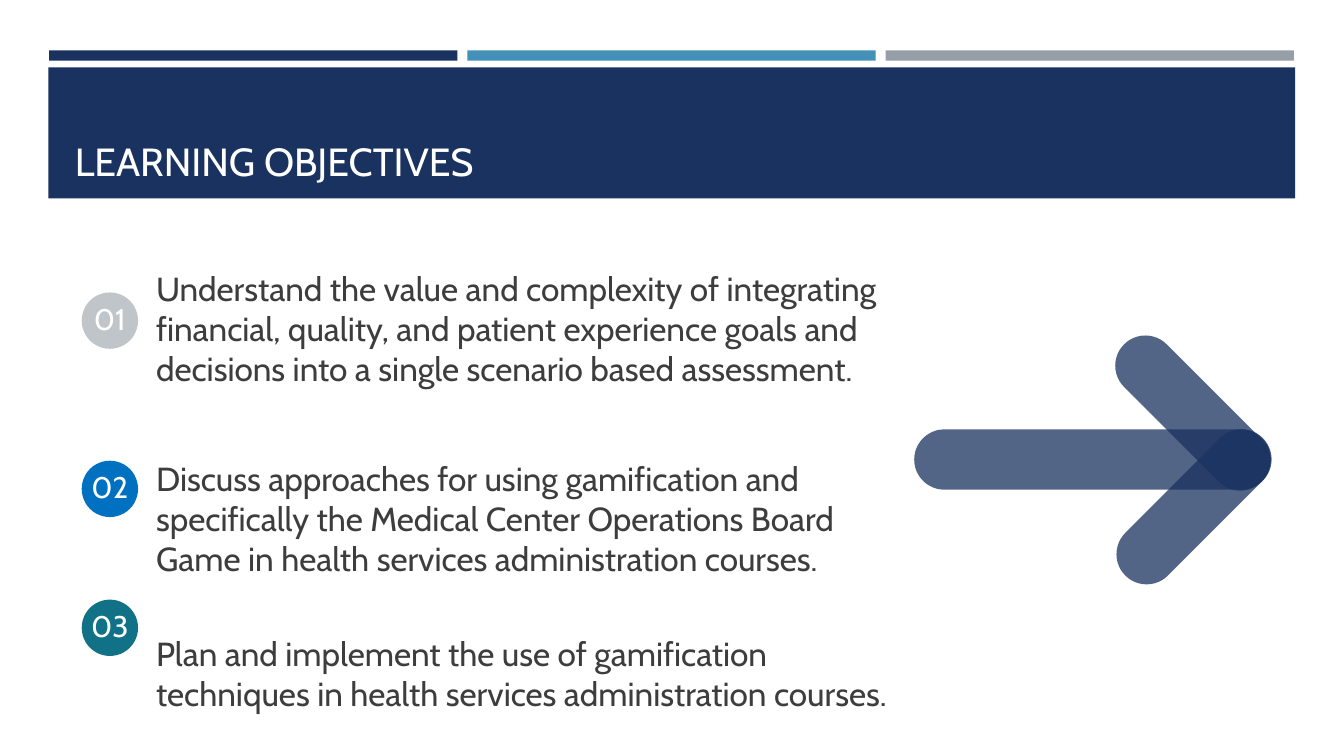
"""Build the learning objectives slide."""
from lxml import etree
from pptx import Presentation
from pptx.dml.color import RGBColor
from pptx.enum import shapes, text
from pptx.oxml import ns
from pptx.util import Cm, Pt

NAVY = RGBColor(0x1A, 0x32, 0x60)
BLUE = RGBColor(0x45, 0x90, 0xB8)
GREY = RGBColor(0x96, 0x9F, 0xA7)
SILVER = RGBColor(0xC0, 0xC5, 0xCA)
BRIGHT_BLUE = RGBColor(0x00, 0x70, 0xC0)
TEAL = RGBColor(0x11, 0x71, 0x86)
CHARCOAL = RGBColor(0x3D, 0x3D, 0x3D)
WHITE = RGBColor(0xFF, 0xFF, 0xFF)
FONT = "Cabin"

OBJECTIVES = (
    ("Understand the value and complexity of integrating financial, quality, "
     "and patient experience goals and decisions into a single scenario based "
     "assessment.", 0),
    ("Discuss approaches for using gamification and specifically the Medical "
     "Center Operations Board Game in health services administration courses.", 50),
    ("Plan and implement the use of gamification techniques in health services "
     "administration courses.", 39.3),
)
BADGES = (("01", 7.37, SILVER), ("02", 11.61, BRIGHT_BLUE), ("03", 15.11, TEAL))
ARROW_STROKES = (
    (27.61, 9.65, 4.9, 45),
    (27.64, 12.01, 4.9, 135),
    (23.04, 10.82, 8.99, 0),
)


def add_filled_shape(parent, kind, box, color):
    """Add a flat, unoutlined shape; box is left, top, width, height in cm."""
    shape = parent.add_shape(kind, *(Cm(length) for length in box))
    shape.shadow.inherit = False
    shape.fill.solid()
    shape.fill.fore_color.rgb = color
    shape.line.fill.background()
    return shape


def write_text(paragraph, content, *, size, color, align=text.PP_ALIGN.LEFT,
               before=0, line_spacing=1.0):
    """Write formatted, unbulleted text into a paragraph."""
    properties = paragraph._p.get_or_add_pPr()
    properties.set("marL", "0")
    properties.set("indent", "0")
    etree.SubElement(properties, ns.qn("a:buNone"))
    paragraph.text = content
    paragraph.alignment = align
    paragraph.space_before = Pt(before)
    paragraph.space_after = Pt(0)
    paragraph.line_spacing = line_spacing
    paragraph.font.name = FONT
    paragraph.font.size = Pt(size)
    paragraph.font.color.rgb = color


def place_placeholder(placeholder, box, anchor):
    """Move a placeholder to the front of the slide and return its text frame."""
    placeholder.left, placeholder.top, placeholder.width, placeholder.height = (
        Cm(length) for length in box)
    placeholder.element.getparent().append(placeholder.element)
    frame = placeholder.text_frame
    frame.word_wrap = True
    frame.auto_size = text.MSO_AUTO_SIZE.NONE
    frame.vertical_anchor = anchor
    return frame


def add_header(slide):
    """Add the three bars, the banner and the title."""
    rectangle = shapes.MSO_SHAPE.RECTANGLE
    for index, color in enumerate((NAVY, BLUE, GREY)):
        add_filled_shape(slide.shapes, rectangle,
                         (1.24 + 10.54 * index, 1.27, 10.29, 0.26), color)
    add_filled_shape(slide.shapes, rectangle, (1.22, 1.7, 31.42, 3.3), NAVY)
    frame = place_placeholder(slide.shapes.title, (1.63, 1.96, 30.63, 2.82),
                              text.MSO_ANCHOR.BOTTOM)
    write_text(frame.paragraphs[0], "LEARNING OBJECTIVES", size=28, color=WHITE)


def add_objectives(slide):
    """Fill the body placeholder with the objectives."""
    frame = place_placeholder(slide.placeholders[1], (3.68, 7.37, 19.05, 10.74),
                              text.MSO_ANCHOR.MIDDLE)
    frame.margin_bottom = Cm(0.89)
    for index, (objective, before) in enumerate(OBJECTIVES):
        paragraph = frame.add_paragraph() if index else frame.paragraphs[0]
        write_text(paragraph, objective, size=23.8, color=CHARCOAL, before=before)


def add_arrow(slide):
    """Add the arrow made of three translucent rounded strokes."""
    group = slide.shapes.add_group_shape()
    for left, top, width, rotation in ARROW_STROKES:
        stroke = add_filled_shape(group.shapes, shapes.MSO_SHAPE.ROUNDED_RECTANGLE,
                                  (left, top, width, 1.52), NAVY)
        stroke.adjustments[0] = 0.5
        stroke.rotation = rotation
        color = stroke.element.spPr.find(ns.qn("a:solidFill"))[0]
        etree.SubElement(color, ns.qn("a:alpha"), val="75000")


def add_badge(slide, number, top, color):
    """Add a numbered circle."""
    badge = add_filled_shape(slide.shapes, shapes.MSO_SHAPE.OVAL,
                             (2.06, top, 1.42, 1.42), color)
    frame = badge.text_frame
    frame.margin_left = frame.margin_right = frame.margin_top = frame.margin_bottom = 0
    frame.word_wrap = False
    frame.vertical_anchor = text.MSO_ANCHOR.MIDDLE
    write_text(frame.paragraphs[0], number, size=21.3, color=WHITE,
               align=text.PP_ALIGN.CENTER, line_spacing=0.89)


def main():
    """Build and save the presentation."""
    presentation = Presentation()
    presentation.slide_width = Cm(33.87)
    presentation.slide_height = Cm(19.05)
    slide = presentation.slides.add_slide(presentation.slide_layouts[1])
    add_header(slide)
    add_objectives(slide)
    add_arrow(slide)
    for number, top, color in BADGES:
        add_badge(slide, number, top, color)
    presentation.save("out.pptx")


if __name__ == "__main__":
    main()
